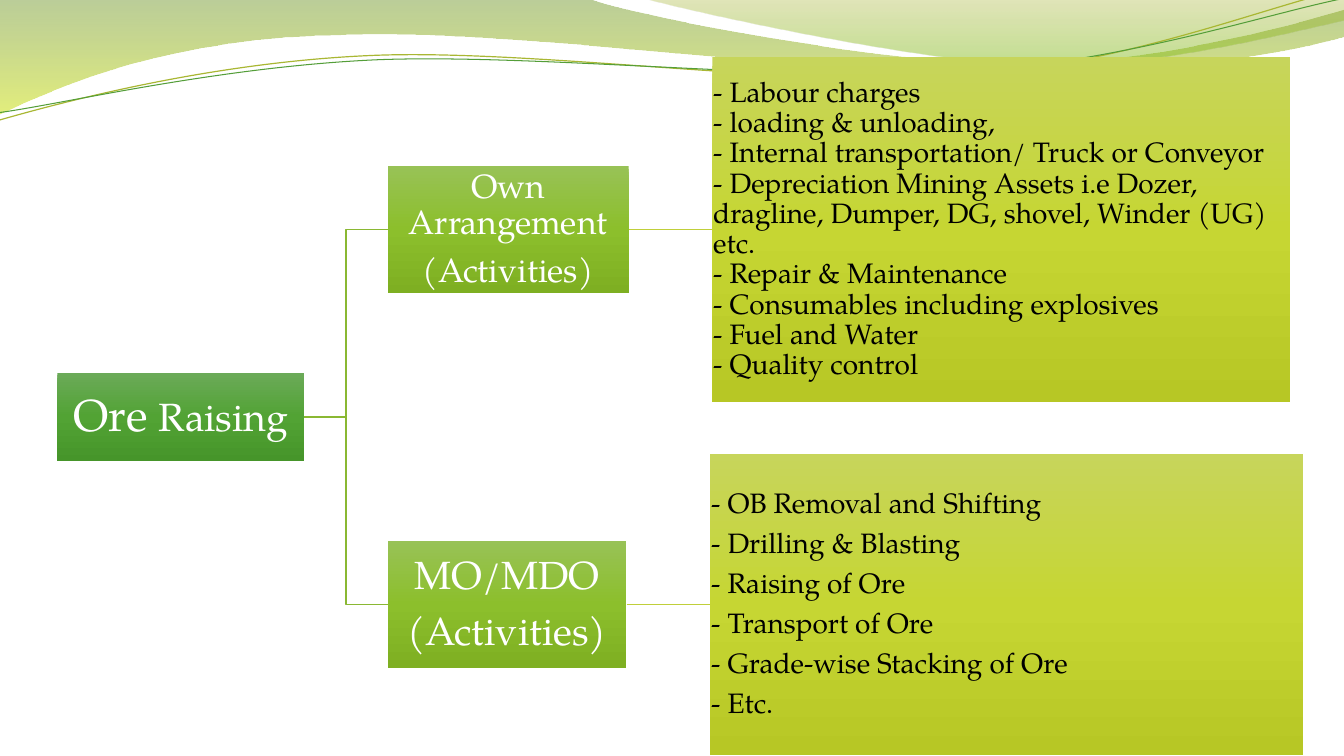
from lxml import etree
from pptx import Presentation
from pptx.dml.color import RGBColor
from pptx.enum.shapes import MSO_CONNECTOR, MSO_SHAPE
from pptx.enum.text import MSO_ANCHOR, PP_ALIGN
from pptx.oxml.ns import qn
from pptx.util import Inches, Pt

ELBOW, STRAIGHT = MSO_CONNECTOR.ELBOW, MSO_CONNECTOR.STRAIGHT
RECTANGLE = MSO_SHAPE.RECTANGLE
MIDDLE = MSO_ANCHOR.MIDDLE
LEFT, CENTER = PP_ALIGN.LEFT, PP_ALIGN.CENTER
RIGHT_SIDE, LEFT_SIDE = 3, 1

FONT = "TeX Gyre Pagella"
COLUMNS, ROWS = 160, 90
WIDTH, HEIGHT = Inches(13.33), Inches(7.5)

ROOT_GREEN = [(0, "6BAA59", 100), (50, "52A334", 100), (100, "46952A", 100)]
BRANCH_GREEN = [(0, "98C256", 100), (50, "8CBF2C", 100), (100, "7EAF22", 100)]
DETAIL_LIME = [(0, "C7D55B", 100), (50, "C6D633", 100), (100, "B7C725", 100)]

WAVE_BANDS = [
    ([(0, "69921C", 45), (100, "CCE10F", 55)],
     (0, 0),
     [[(70.4, -0.1)],
      [(76, 2), (106, 7.6), (121.3, 7.6)],
      [(136.4, 7.6), (153.2, 3.1), (160, 1.1)],
      [(160, 4.3)],
      [(157.3, 5.3), (139.1, 9.1), (119.3, 9)],
      [(99.5, 9), (61.1, 3.4), (41.2, 4.1)],
      [(20.6, 4.3), (7.3, 10), (-0.2, 13.6)],
      [(0, 0)]]),
    ([(0, "9BAA1A", 30), (80, "81BA16", 45)],
     (76.6, -0.1),
     [[(81.5, 1.3), (109.1, 7.4), (123, 7.8)],
      [(136.8, 8.3), (153.8, 3.8), (160, 2.5)],
      [(160, 0)],
      [(76.6, -0.1)]]),
]
WAVE_LINES = [
    ("A9B733", 0.85, (-0.1, 14.3),
     [[(7.6, 12.1), (25.2, 7.4), (44.3, 6.6)],
      [(63.2, 5.8), (94.7, 10.4), (113.9, 9.1)],
      [(133.2, 7.9), (150.1, 1), (159.6, -1.2)]]),
    ("549E39", 0.75, (-0.1, 13.4),
     [[(7.4, 12.4), (26.2, 7.9), (45.2, 7.1)],
      [(64.4, 6.4), (95.5, 9.8), (114.6, 8.6)],
      [(133.7, 7.4), (150.6, 1.7), (160, -0.2)]]),
]

OWN_ACTIVITIES = [
    "- Labour charges",
    "- loading & unloading,",
    "- Internal transportation/ Truck or Conveyor",
    "- Depreciation Mining Assets i.e Dozer, dragline, Dumper, DG, shovel, Winder (UG) etc.",
    "- Repair & Maintenance",
    "- Consumables including explosives",
    "- Fuel and Water",
    "- Quality control",
]
MDO_ACTIVITIES = [
    "- OB Removal and Shifting",
    "- Drilling & Blasting",
    "- Raising of Ore",
    "- Transport of Ore",
    "- Grade-wise Stacking of Ore",
    "- Etc.",
]


def color(hex_code):
    return RGBColor.from_string(hex_code)


def col(count):
    return round(WIDTH * count / COLUMNS)


def row(count):
    return round(HEIGHT * count / ROWS)


def fill_gradient(shape, stops):
    shape.fill.gradient()
    gradient = shape._element.spPr.find(qn("a:gradFill"))
    for child in list(gradient):
        gradient.remove(child)
    stop_list = etree.SubElement(gradient, qn("a:gsLst"))
    for position, hex_code, opacity in stops:
        stop = etree.SubElement(stop_list, qn("a:gs"), pos=str(position * 1000))
        tint = etree.SubElement(stop, qn("a:srgbClr"), val=hex_code)
        if opacity < 100:
            etree.SubElement(tint, qn("a:alpha"), val=str(opacity * 1000))
    etree.SubElement(gradient, qn("a:lin"), ang="5400000", scaled="0")


def bend(wave, segments):
    steps = iter(list(wave._element.iter(qn("a:lnTo"))))
    for segment in segments:
        first, *others = [next(steps) for _ in segment]
        if others:
            first.tag = qn("a:cubicBezTo")
            for step in others:
                first.append(step[0])
                step.getparent().remove(step)


def add_wave(slide, box, start, segments, close):
    left, top = box[:2]
    points = [(col(left + x), row(top + y))
              for x, y in [start] + [point for segment in segments for point in segment]]
    builder = slide.shapes.build_freeform(*points[0])
    builder.add_line_segments(points[1:], close=close)
    wave = builder.convert_to_shape()
    wave.shadow.inherit = False
    bend(wave, segments)
    return wave


def draw_waves(slide, box):
    for stops, start, segments in WAVE_BANDS:
        band = add_wave(slide, box, start, segments, True)
        fill_gradient(band, stops)
        band.line.fill.background()
    for hex_code, weight, start, segments in WAVE_LINES:
        strand = add_wave(slide, box, start, segments, False)
        strand.fill.background()
        strand.line.color.rgb = color(hex_code)
        strand.line.width = Pt(weight)


def write_text(shape, paragraphs, align=CENTER, hex_code="FFFFFF", gap=0.35, inset=0.02):
    frame = shape.text_frame
    frame.word_wrap = True
    frame.vertical_anchor = MIDDLE
    frame.margin_left = frame.margin_right = Inches(inset)
    frame.margin_top = frame.margin_bottom = Inches(inset)
    for index, runs in enumerate(paragraphs):
        paragraph = frame.add_paragraph() if index else frame.paragraphs[0]
        paragraph.alignment = align
        paragraph.line_spacing = 0.9
        paragraph.space_before = Pt(0)
        paragraph.space_after = Pt(gap * runs[-1][1])
        for text, size in runs:
            run = paragraph.add_run()
            run.text = text
            run.font.name = FONT
            run.font.size = Pt(size)
            run.font.color.rgb = color(hex_code)


def add_panel(slide, box, stops, paragraphs, **text_format):
    left, top, width, height = box
    panel = slide.shapes.add_shape(RECTANGLE, col(left), row(top), col(width), row(height))
    panel.shadow.inherit = False
    panel.line.fill.background()
    fill_gradient(panel, stops)
    write_text(panel, paragraphs, **text_format)
    return panel


def join(slide, kind, source, target, hex_code):
    link = slide.shapes.add_connector(kind, 0, 0, 0, 0)
    link.begin_connect(source, RIGHT_SIDE)
    link.end_connect(target, LEFT_SIDE)
    link.line.color.rgb = color(hex_code)
    link.line.width = Pt(1)
    etree.SubElement(link._element.spPr, qn("a:effectLst"))


def draw_branch(slide, root, box, branch_width, heading, heading_size, activities, gap):
    left, top, width, height = box
    branch_height, detail_offset = 15.12, branch_width + 9.96
    branch_box = (left, top + (height - branch_height) / 2, branch_width, branch_height)
    branch = add_panel(slide, branch_box, BRANCH_GREEN,
                       [[(line, heading_size)] for line in (heading, "(Activities)")])
    detail_box = (left + detail_offset, top, width - detail_offset, height)
    detail = add_panel(slide, detail_box, DETAIL_LIME, [[(line, 20)] for line in activities],
                       align=LEFT, hex_code="000000", gap=gap, inset=0.01)
    join(slide, ELBOW, root, branch, "8AB833")
    join(slide, STRAIGHT, branch, detail, "C0CF3A")


def main():
    deck = Presentation()
    deck.slide_width, deck.slide_height = WIDTH, HEIGHT
    slide = deck.slides.add_slide(deck.slide_layouts[6])
    draw_waves(slide, (0, 0, COLUMNS, ROWS))
    root = add_panel(slide, (6.82, 44.36, 29.4, 10.54), ROOT_GREEN,
                     [[("Ore ", 32), ("Raising", 28)]])
    draw_branch(slide, root, (46.15, 6.8, 107.4, 41.04), 28.68,
                "Own Arrangement", 24, OWN_ACTIVITIES, 0)
    draw_branch(slide, root, (46.15, 54, 109.02, 35.9), 28.44,
                "MO/MDO", 28, MDO_ACTIVITIES, 0.35)
    deck.save("out.pptx")


if __name__ == "__main__":
    main()
